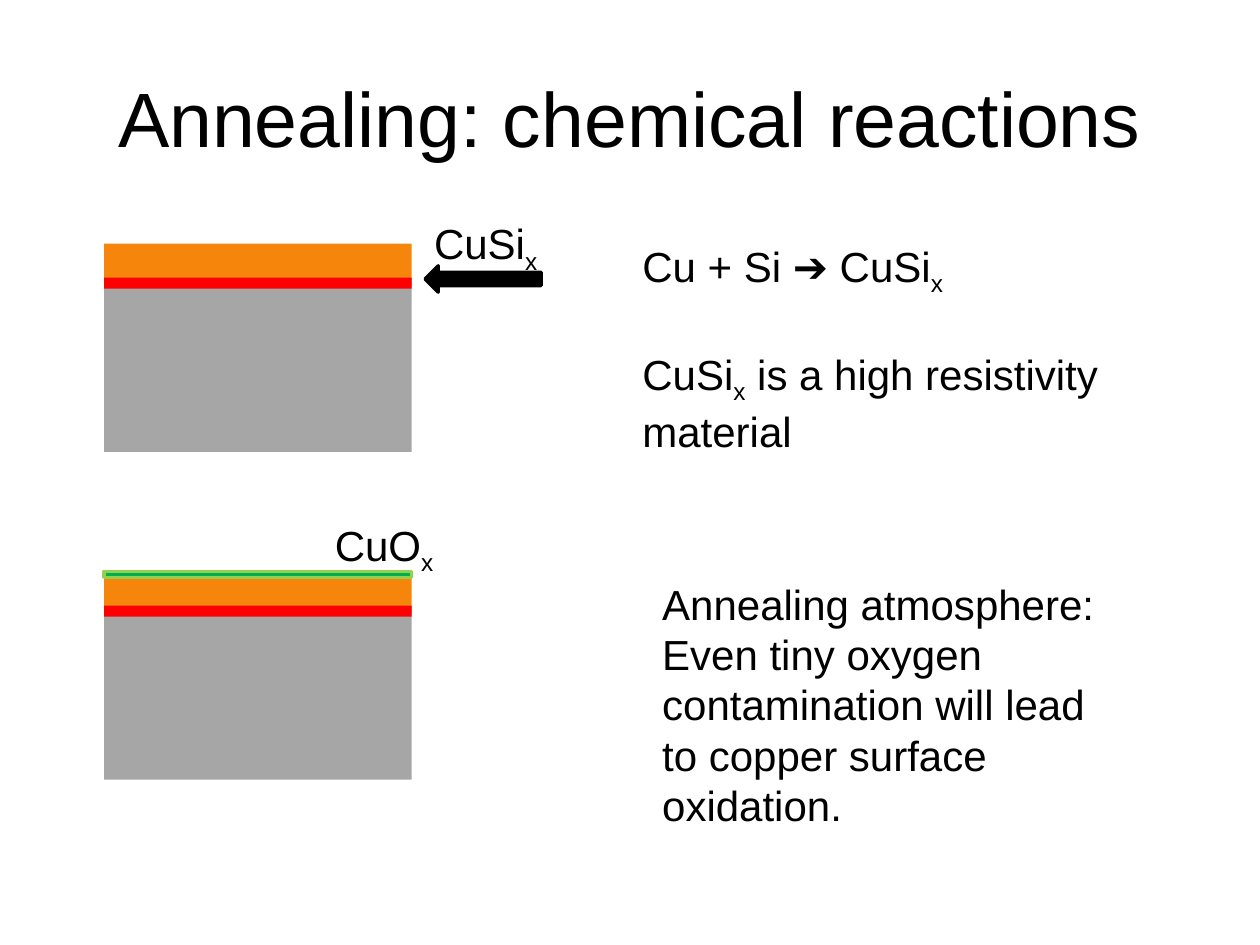
from dataclasses import dataclass
from typing import Optional

from pptx import Presentation
from pptx.dml.color import RGBColor
from pptx.enum.shapes import MSO_SHAPE
from pptx.enum.text import MSO_ANCHOR, PP_ALIGN
from pptx.util import Cm, Pt

BLACK = RGBColor(0x00, 0x00, 0x00)
COPPER = RGBColor(0xF5, 0x86, 0x0B)
SILICON = RGBColor(0xA6, 0xA6, 0xA6)
SILICIDE = RGBColor(0xFF, 0x00, 0x00)
OXIDE = RGBColor(0x00, 0xB0, 0x50)
OXIDE_EDGE = RGBColor(0x92, 0xD0, 0x50)

STACK_LEFT = 2.1
STACK_WIDTH = 6.2
BODY_FORMAT = {"name": "Arial", "size": Pt(24)}
TITLE_FORMAT = {"name": "Arial", "size": Pt(44)}
SUBSCRIPT = "-25000"


@dataclass(frozen=True)
class Layer:
    offset: float
    height: float
    fill: RGBColor
    edge: Optional[RGBColor] = None


@dataclass(frozen=True)
class Run:
    text: str
    subscript: bool = False


@dataclass(frozen=True)
class Label:
    left: float
    top: float
    width: float
    height: float
    paragraphs: tuple[tuple[Run, ...], ...]
    paragraph_gap: float = 0


X = Run("x", subscript=True)
LAYERS = (
    Layer(0, 0.86, COPPER),
    Layer(0.7, 3.5, SILICON),
    Layer(0.69, 0.22, SILICIDE),
)
OXIDE_LAYER = Layer(0, 0.12, OXIDE, OXIDE_EDGE)
STACKS = ((4.91, LAYERS), (11.52, LAYERS + (OXIDE_LAYER,)))

TITLE = Label(1.27, 0.76, 22.86, 3.18, ((Run("Annealing: chemical reactions"),),))
LABELS = (
    Label(12.7, 4.72, 11, 4.37, (
        (Run("Cu + Si ➔ CuSi"), X),
        (Run("CuSi"), X, Run(" is a high resistivity material")),
    ), paragraph_gap=29),
    Label(13.1, 11.53, 9.4, 5.38, (
        (Run("Annealing atmosphere:"),),
        (Run("Even tiny oxygen contamination will lead to copper surface oxidation."),),
    )),
    Label(6.5, 10.34, 3.2, 1.27, ((Run("CuO"), X),)),
    Label(8.5, 4.27, 3.4, 1.27, ((Run("CuSi"), X),)),
)


def paint(shape, fill: RGBColor, edge: Optional[RGBColor] = None) -> None:
    shape.shadow.inherit = False
    shape.fill.solid()
    shape.fill.fore_color.rgb = fill
    if edge is None:
        shape.line.fill.background()
    else:
        shape.line.color.rgb = edge
        shape.line.width = Pt(2)


def draw_stack(slide, top: float, layers: tuple[Layer, ...]) -> None:
    group = slide.shapes.add_group_shape()
    for layer in layers:
        shape = group.shapes.add_shape(
            MSO_SHAPE.RECTANGLE, Cm(STACK_LEFT), Cm(top + layer.offset),
            Cm(STACK_WIDTH), Cm(layer.height))
        paint(shape, layer.fill, layer.edge)


def draw_label(slide, label: Label, font_format: dict,
               alignment: PP_ALIGN = PP_ALIGN.LEFT,
               anchor: MSO_ANCHOR = MSO_ANCHOR.TOP) -> None:
    box = slide.shapes.add_textbox(
        Cm(label.left), Cm(label.top), Cm(label.width), Cm(label.height))
    frame = box.text_frame
    frame.word_wrap = True
    frame.vertical_anchor = anchor
    for index, runs in enumerate(label.paragraphs):
        paragraph = frame.add_paragraph() if index else frame.paragraphs[0]
        paragraph.alignment = alignment
        if index:
            paragraph.space_before = Pt(label.paragraph_gap)
        for item in runs:
            run = paragraph.add_run()
            run.text = item.text
            for attribute, value in font_format.items():
                setattr(run.font, attribute, value)
            run.font.color.rgb = BLACK
            if item.subscript:
                run._r.get_or_add_rPr().set("baseline", SUBSCRIPT)


def main() -> None:
    presentation = Presentation()
    presentation.slide_width = Cm(25.4)
    presentation.slide_height = Cm(19.05)
    slide = presentation.slides.add_slide(presentation.slide_layouts[6])

    draw_label(slide, TITLE, TITLE_FORMAT, PP_ALIGN.CENTER, MSO_ANCHOR.MIDDLE)
    for top, layers in STACKS:
        draw_stack(slide, top, layers)
    for label in LABELS:
        draw_label(slide, label, BODY_FORMAT)
    arrow = slide.shapes.add_shape(
        MSO_SHAPE.LEFT_ARROW, Cm(8.57), Cm(5.36), Cm(2.34), Cm(0.53))
    paint(arrow, BLACK, BLACK)

    presentation.save("out.pptx")


if __name__ == "__main__":
    main()
